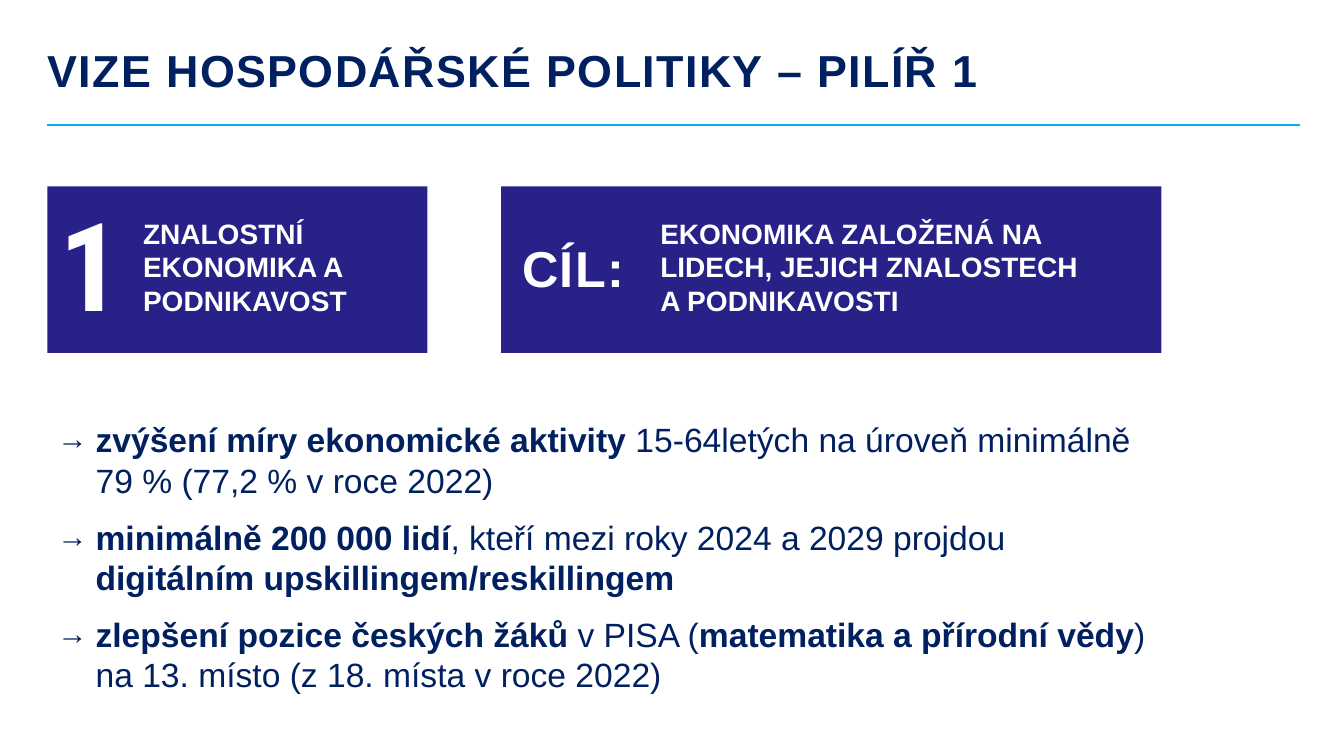
from lxml.etree import SubElement
from pptx import Presentation
from pptx.dml.color import RGBColor
from pptx.enum.shapes import MSO_CONNECTOR, MSO_SHAPE
from pptx.enum.text import MSO_ANCHOR, MSO_AUTO_SIZE, PP_ALIGN
from pptx.oxml.ns import qn
from pptx.util import Inches, Pt

NAVY = "002060"
INDIGO = "272188"
SKY = "00B0F0"
WHITE = "FFFFFF"
LEFT = 0.47
PANEL_TOP = 1.85
PANEL_HEIGHT = 1.65

GOALS = [
    [("zvýšení míry ekonomické aktivity ", True),
     ("15-64letých na úroveň minimálně 79 % (77,2 % v roce 2022)", False)],
    [("minimálně 200 000 lidí", True),
     (", kteří mezi roky 2024 a 2029 projdou ", False),
     ("digitálním upskillingem/reskillingem", True)],
    [("zlepšení pozice českých žáků ", True),
     ("v PISA (", False),
     ("matematika a přírodní vědy", True),
     (") na 13. místo (z 18. místa v roce 2022)", False)],
]


def color(value):
    return RGBColor.from_string(value)


def set_font(font, size, value, bold=None, name="Arial"):
    font.name = name
    font.size = Pt(size)
    font.color.rgb = color(value)
    font.bold = bold


def place(shape, left, top, width, height):
    shape.left, shape.top = Inches(left), Inches(top)
    shape.width, shape.height = Inches(width), Inches(height)


def write_heading(shape, text, size, value, name="Arial"):
    """Fill a shape with one tight, letter-spaced bold line."""
    frame = shape.text_frame
    frame.word_wrap = True
    frame.auto_size = MSO_AUTO_SIZE.NONE
    frame.vertical_anchor = MSO_ANCHOR.MIDDLE
    frame.margin_left = 0
    para = frame.paragraphs[0]
    para.text = text
    para.alignment = PP_ALIGN.LEFT
    para.line_spacing = 0.9
    set_font(para.font, size, value, True, name)
    for span in para.runs:
        span.font._element.set("spc", "100")


def add_text_box(shapes, left, top, width, height):
    box = shapes.add_textbox(Inches(left), Inches(top), Inches(width), Inches(height))
    box.text_frame.word_wrap = True
    return box


def add_rule(page, left, right, top):
    rule = page.shapes.add_connector(
        MSO_CONNECTOR.STRAIGHT, Inches(left), Inches(top), Inches(right), Inches(top))
    rule.line.color.rgb = color(SKY)
    rule.line.width = Pt(1)
    SubElement(rule._element.spPr, qn("a:effectLst"))


def add_panel(page, left, width, label, label_left, label_width, label_size,
              label_font, text, text_width):
    """Group a filled rectangle with a large label and a statement to its right."""
    shapes = page.shapes.add_group_shape().shapes
    panel = shapes.add_shape(MSO_SHAPE.RECTANGLE, Inches(left), Inches(PANEL_TOP),
                             Inches(width), Inches(PANEL_HEIGHT))
    panel.shadow.inherit = False
    panel.fill.solid()
    panel.fill.fore_color.rgb = color(INDIGO)
    panel.line.fill.background()

    label_box = add_text_box(shapes, label_left, 2.04, label_width, 1.3)
    write_heading(label_box, label, label_size, WHITE, label_font)

    box = add_text_box(shapes, label_left + label_width, 2.09, text_width, 1.11)
    box.text_frame.vertical_anchor = MSO_ANCHOR.MIDDLE
    box.text_frame.auto_size = MSO_AUTO_SIZE.SHAPE_TO_FIT_TEXT
    para = box.text_frame.paragraphs[0]
    para.text = text
    set_font(para.font, 20, WHITE, True)


def add_arrow_bullet(para):
    properties = para._p.get_or_add_pPr()
    properties.set("marL", str(Inches(0.38)))
    properties.set("indent", str(Inches(-0.38)))
    bullet_color = SubElement(properties, qn("a:buClr"))
    SubElement(bullet_color, qn("a:srgbClr"), val=NAVY)
    SubElement(properties, qn("a:buSzPct"), val="90000")
    SubElement(properties, qn("a:buFont"), typeface="Arial")
    SubElement(properties, qn("a:buChar"), char="→")


def add_goals(page):
    frame = add_text_box(page.shapes, LEFT, 4.11, 11.05, 3.33).text_frame
    frame.auto_size = MSO_AUTO_SIZE.SHAPE_TO_FIT_TEXT
    for index, goal in enumerate(GOALS):
        para = frame.add_paragraph() if index else frame.paragraphs[0]
        add_arrow_bullet(para)
        para.space_after = Pt(12)
        set_font(para.font, 24, NAVY)
        for text, bold in goal:
            span = para.add_run()
            span.text = text
            span.font.bold = bold


def main():
    deck = Presentation()
    deck.slide_width, deck.slide_height = Inches(13.33), Inches(7.5)
    page = deck.slides.add_slide(deck.slide_layouts.get_by_name("Title Only"))

    title = page.shapes.title
    place(title, LEFT, 0.48, 10.09, 0.48)
    write_heading(title, "VIZE HOSPODÁŘSKÉ POLITIKY – PILÍŘ 1", 32, NAVY)
    add_rule(page, LEFT, 12.89, 1.24)

    add_panel(page, LEFT, 3.77, "1", 0.59, 0.73, 88, "Roboto Condensed",
              "ZNALOSTNÍ EKONOMIKA A PODNIKAVOST", 2.75)
    add_goals(page)
    add_panel(page, 4.97, 6.55, "CÍL:", 5.18, 1.27, 36, "Arial",
              "EKONOMIKA ZALOŽENÁ NA LIDECH, JEJICH ZNALOSTECH \vA PODNIKAVOSTI", 4.78)

    deck.save("out.pptx")


if __name__ == "__main__":
    main()
